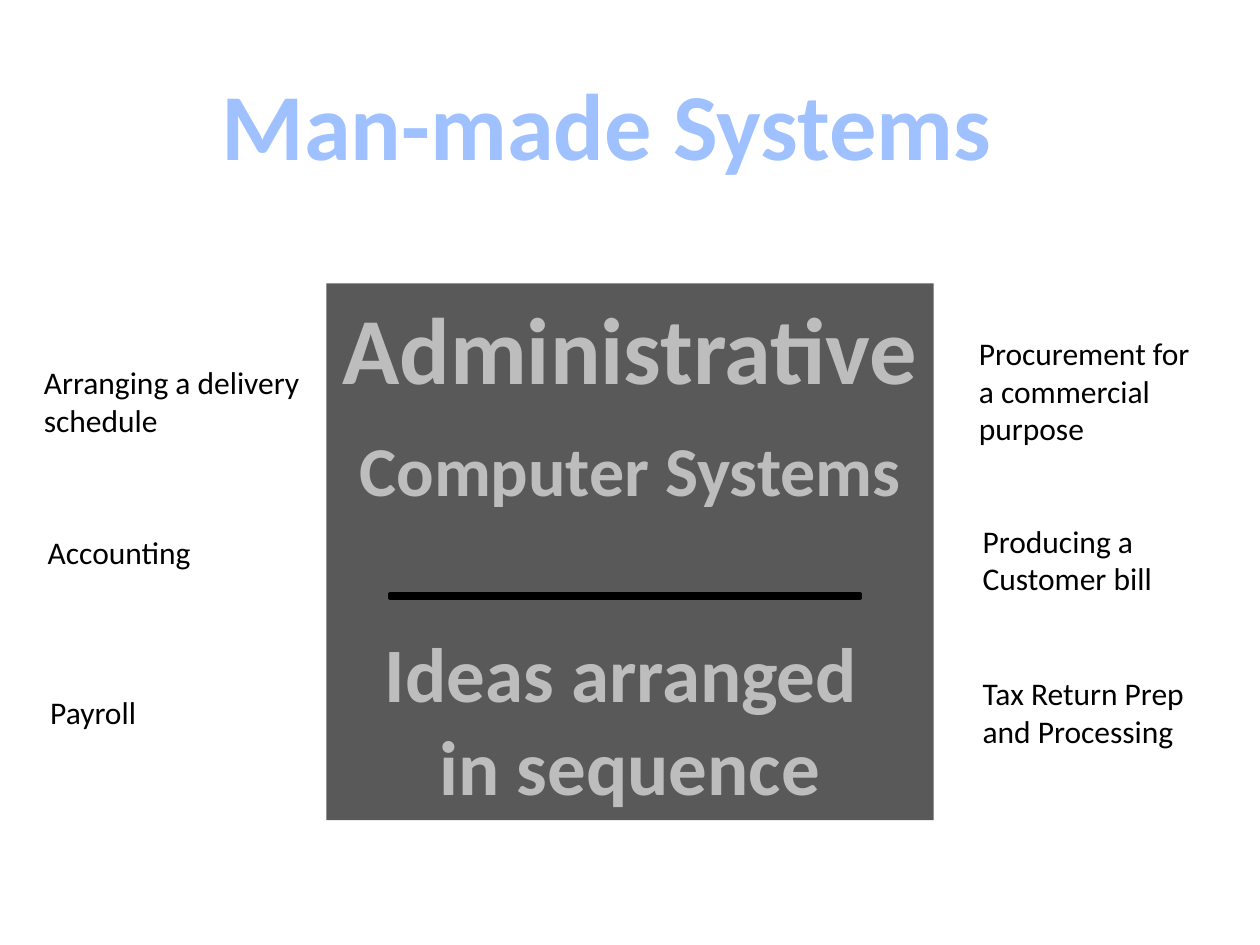
import pptx
import pptx.util
import pptx.dml.color
import pptx.enum.shapes
import pptx.enum.text

Inches = pptx.util.Inches
Pt = pptx.util.Pt
Align = pptx.enum.text.PP_ALIGN
Anchor = pptx.enum.text.MSO_ANCHOR
Preset = pptx.enum.shapes.MSO_SHAPE

FONT = "Calibri"
COLORS = {"title": "A0C1FF", "panel": "595959", "panel_text": "BDBDBD", "black": "000000"}

TITLE = "Man-made Systems"
PANEL_LINES = [
    ("Administrative", 54, 0),
    ("Computer Systems", 40, 13.4),
    ("Ideas arranged ", 44, 65.9),
    ("in sequence", 44, 0),
]
EXAMPLES = [
    (["Arranging a delivery", "schedule"], 0.25, 2.83, 3.17, 0.71),
    (["Accounting"], 0.28, 4.18, 1.35, 0.4),
    (["Payroll"], 0.3, 5.45, 0.89, 0.4),
    (["Procurement for", "a commercial", "purpose"], 7.67, 2.6, 1.89, 1.01),
    (["Producing a", "Customer bill"], 7.7, 4.09, 1.62, 0.71),
    (["Tax Return Prep", "and Processing"], 7.7, 5.3, 1.82, 0.71),
]


def color(name):
    return pptx.dml.color.RGBColor.from_string(COLORS[name])


def write(frame, lines, color_name, alignment, bold=False, wrap=False):
    frame.word_wrap = wrap
    for index, (text, size, space_before) in enumerate(lines):
        paragraph = frame.paragraphs[0] if index == 0 else frame.add_paragraph()
        paragraph.text = text
        paragraph.alignment = alignment
        paragraph.space_before = Pt(space_before)
        paragraph.font.name = FONT
        paragraph.font.size = Pt(size)
        paragraph.font.bold = bold
        paragraph.font.color.rgb = color(color_name)


def add_filled(slide, preset, box, color_name):
    shape = slide.shapes.add_shape(preset, *map(Inches, box))
    shape.shadow.inherit = False
    shape.fill.solid()
    shape.fill.fore_color.rgb = color(color_name)
    return shape


def main():
    presentation = pptx.Presentation()
    presentation.slide_width, presentation.slide_height = Inches(10), Inches(7.5)
    slide = presentation.slides.add_slide(presentation.slide_layouts[5])

    title = slide.shapes.title
    title.left, title.top, title.width, title.height = map(Inches, (1.63, 0.47, 6.37, 1.01))
    title.text_frame.vertical_anchor = Anchor.TOP
    write(title.text_frame, [(TITLE, 54, 0)], "title", Align.CENTER, bold=True)

    panel = add_filled(slide, Preset.RECTANGLE, (2.59, 2.25, 4.82, 4.26), "panel")
    panel.line.fill.background()
    panel.text_frame.vertical_anchor = Anchor.TOP
    write(panel.text_frame, PANEL_LINES, "panel_text", Align.CENTER, bold=True)

    for lines, *box in EXAMPLES:
        label = slide.shapes.add_textbox(*map(Inches, box))
        write(label.text_frame, [(line, 18, 0) for line in lines], "black", Align.LEFT, wrap=True)

    divider = add_filled(slide, Preset.MATH_MINUS, (2.42, 4.67, 5.08, 0.12), "black")
    divider.line.color.rgb = color("black")
    divider.line.width = Pt(2)

    presentation.save("out.pptx")


if __name__ == "__main__":
    main()
